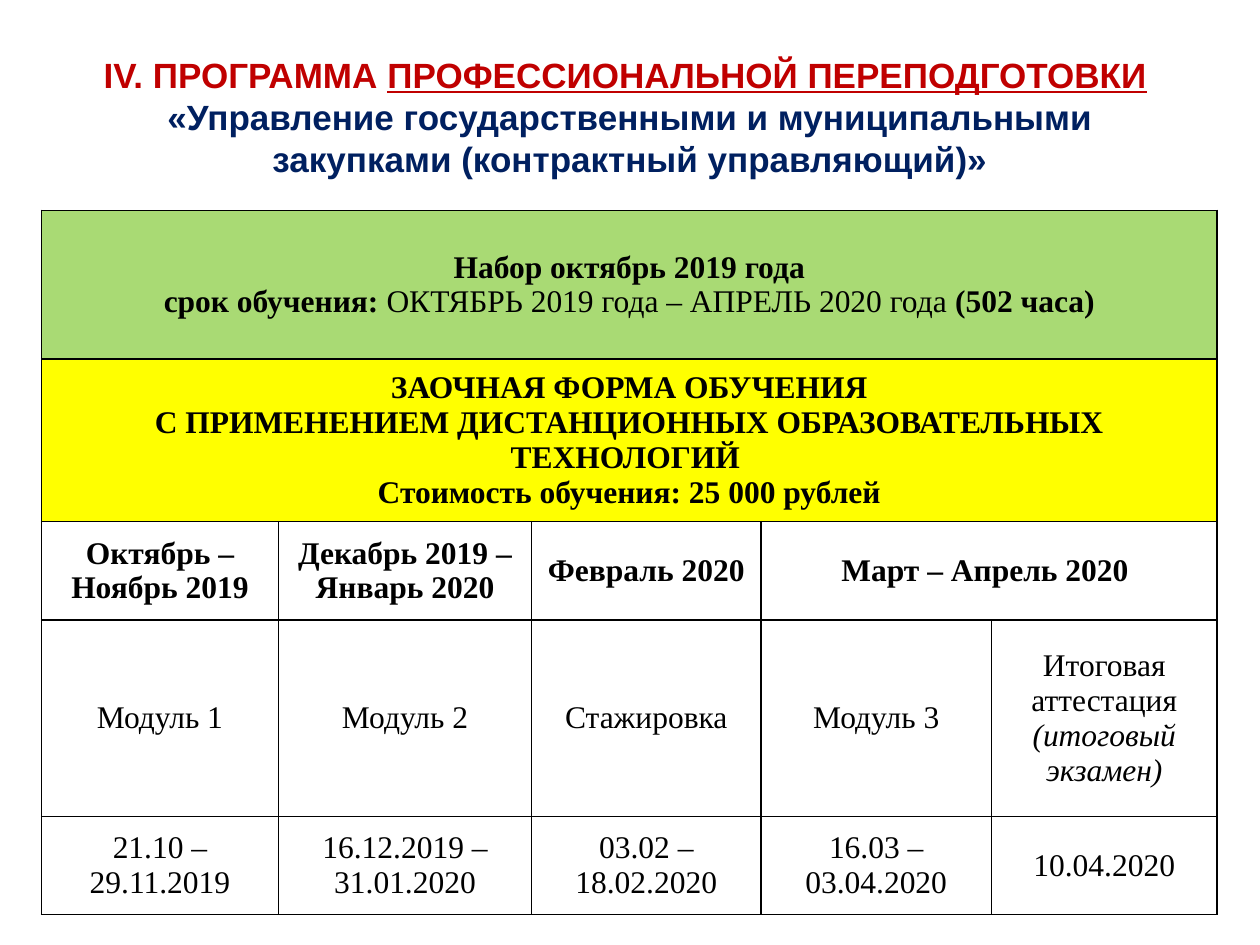
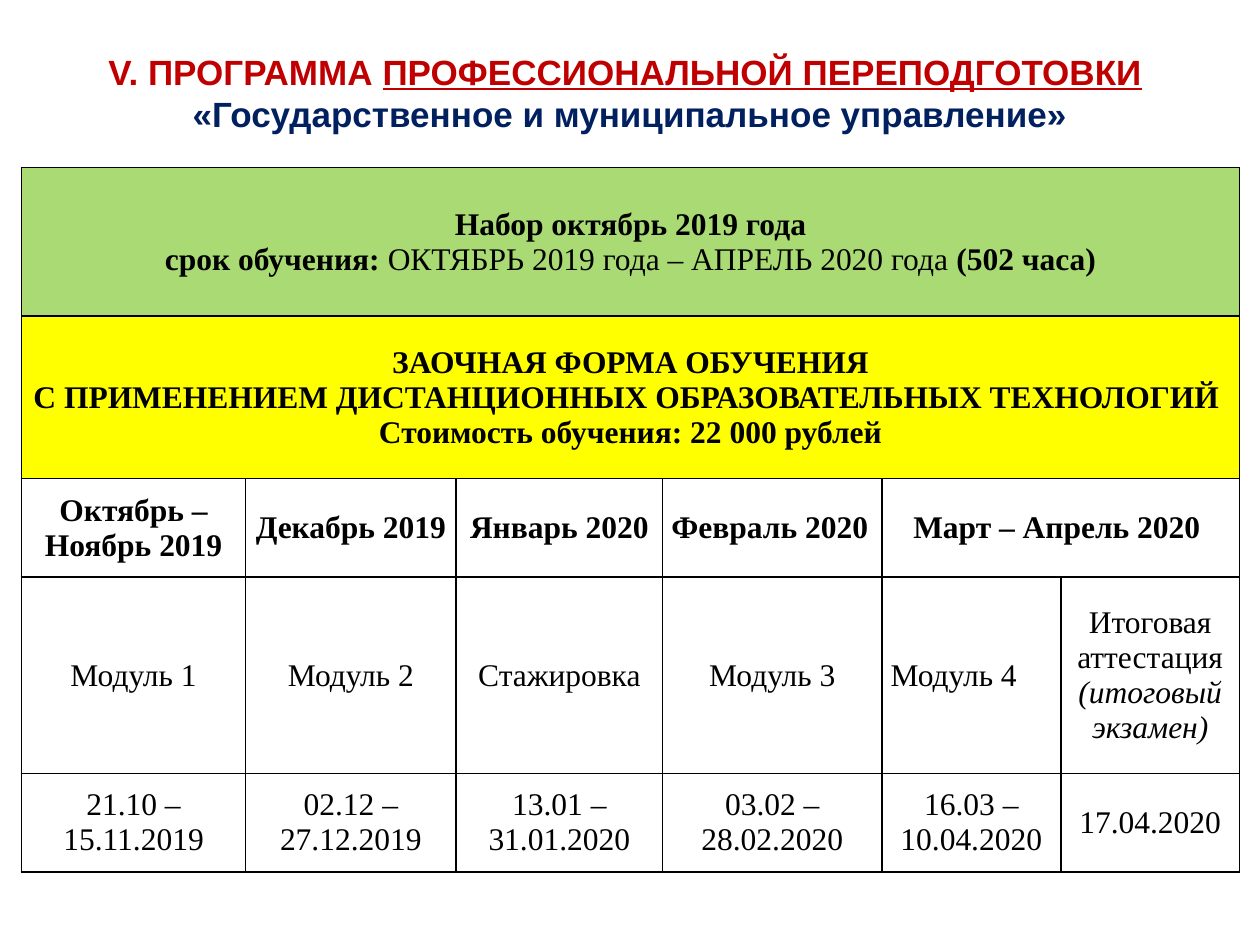
from lxml import etree
from pptx import Presentation
from pptx import util as u
from pptx.dml.color import RGBColor
from pptx.enum import text
from pptx.oxml import ns

COLORS = {"heading": "C00000", "program": "002060", "ink": "000000",
          "intake": "A9DA74", "format": "FFFF00"}
ROW_HEIGHTS = [1.18, 1.29, 0.78, 1.56, 0.78]
INTAKE = [[("Набор октябрь 2019 года", "b")],
          [("срок обучения: ", "b"), ("ОКТЯБРЬ 2019 года – АПРЕЛЬ 2020 года", ""),
           (" (502 часа)", "b")]]
EXAM = [[("Итоговая аттестация", "")], [("(итоговый экзамен)", "i")]]

PROGRAMS = [
    {"number": "IV", "name": "«Управление государственными и муниципальными "
                             "закупками (контрактный управляющий)»",
     "title_height": 1.25, "left": 0.33, "top": 1.67, "price": "25 000",
     "widths": [1.88, 2.01, 1.82, 1.83, 1.79],
     "months": ["Октябрь – Ноябрь 2019", "Декабрь 2019 – Январь 2020",
                "Февраль 2020", "Март – Апрель 2020 "],
     "stages": ["Модуль 1", "Модуль 2", "Стажировка", "Модуль 3"],
     "dates": ["21.10 – 29.11.2019", "16.12.2019 – 31.01.2020",
               "03.02 – 18.02.2020", "16.03 – 03.04.2020", "10.04.2020"],
     "left_aligned": []},
    {"number": "V", "name": "«Государственное и муниципальное управление»",
     "title_height": 0.87, "left": 0.17, "top": 1.33, "price": "22 000",
     "widths": [1.78, 1.67, 1.64, 1.74, 1.42, 1.42],
     "months": ["Октябрь – Ноябрь 2019", "Декабрь 2019", "Январь 2020",
                "Февраль 2020", "Март – Апрель 2020 "],
     "stages": ["Модуль 1", "Модуль 2", "Стажировка", "Модуль 3", "Модуль 4"],
     "dates": ["21.10 – 15.11.2019", "02.12 – 27.12.2019", "13.01 – 31.01.2020",
               "03.02 – 28.02.2020", "16.03 – 10.04.2020", "17.04.2020"],
     "left_aligned": [(2, 3), (3, 4)]},
]


class Deck:
    """Holds the style and the current slide."""

    def __init__(self):
        self.prs = Presentation()
        self.prs.slide_width, self.prs.slide_height = u.Inches(10), u.Inches(7.5)
        self.slide = None

    def new_slide(self):
        self.slide = self.prs.slides.add_slide(self.prs.slide_layouts[6])

    def run(self, paragraph, words, flags, font, size, color):
        run = paragraph.add_run()
        run.text = words
        run.font.name, run.font.size = font, u.Pt(size)
        run.font.bold, run.font.italic = "b" in flags, "i" in flags
        run.font.underline = "u" in flags
        run.font.color.rgb = RGBColor.from_string(COLORS[color])

    def title(self, number, name, height):
        box = self.slide.shapes.add_textbox(
            u.Inches(0.5), u.Inches(0.3), u.Inches(9), u.Inches(height))
        frame = box.text_frame
        frame.word_wrap = True
        frame.vertical_anchor = text.MSO_ANCHOR.MIDDLE
        heading = frame.paragraphs[0]
        heading.alignment = text.PP_ALIGN.CENTER
        heading.line_spacing = u.Pt(24)
        for words, flags in [(f"{number}. ПРОГРАММА ", "b"),
                             ("ПРОФЕССИОНАЛЬНОЙ ПЕРЕПОДГОТОВКИ", "bu"), (" ", "b")]:
            self.run(heading, words, flags, "Arial", 20, "heading")
        heading.add_line_break()
        self.run(heading, name, "b", "Arial", 20, "program")

    def border(self, cell):
        props = cell._tc.get_or_add_tcPr()
        for index, side in enumerate(["lnL", "lnR", "lnT", "lnB"]):
            line = etree.Element(ns.qn(f"a:{side}"), w=str(u.Pt(1)))
            fill = etree.SubElement(line, ns.qn("a:solidFill"))
            etree.SubElement(fill, ns.qn("a:srgbClr"), val=COLORS["ink"])
            props.insert(index, line)

    def cell(self, cell, lines, align=text.PP_ALIGN.CENTER):
        cell.vertical_anchor = text.MSO_ANCHOR.MIDDLE
        cell.margin_left = cell.margin_right = u.Inches(0.07)
        cell.margin_top = cell.margin_bottom = 0
        frame = cell.text_frame
        for index, line in enumerate(lines):
            paragraph = frame.add_paragraph() if index else frame.paragraphs[0]
            paragraph.alignment = align
            for words, flags in line:
                self.run(paragraph, words, flags, "Times New Roman", 18, "ink")

    def schedule(self, program):
        widths = program["widths"]
        last = len(widths) - 1
        table = self.slide.shapes.add_table(
            len(ROW_HEIGHTS), len(widths), u.Inches(program["left"]),
            u.Inches(program["top"]), u.Inches(sum(widths)),
            u.Inches(sum(ROW_HEIGHTS))).table
        table.first_row = table.horz_banding = False
        for column, width in zip(table.columns, widths):
            column.width = u.Inches(width)
        for row, height in zip(table.rows, ROW_HEIGHTS):
            row.height = u.Inches(height)

        # Fills and borders
        for row, fill in enumerate(["intake", "format", None, None, None]):
            for cell in table.rows[row].cells:
                if fill:
                    cell.fill.solid()
                    cell.fill.fore_color.rgb = RGBColor.from_string(COLORS[fill])
                else:
                    cell.fill.background()
                self.border(cell)

        # Joined cells: two full-width bands and the closing months
        for row, first in [(0, 0), (1, 0), (2, last - 1)]:
            table.cell(row, first).merge(table.cell(row, last))

        # Wording
        study_format = [[(words, "b")] for words in (
            "ЗАОЧНАЯ ФОРМА ОБУЧЕНИЯ",
            "С ПРИМЕНЕНИЕМ ДИСТАНЦИОННЫХ ОБРАЗОВАТЕЛЬНЫХ ТЕХНОЛОГИЙ ",
            f"Стоимость обучения: {program['price']} рублей")]
        rows = [[INTAKE], [study_format],
                [[[(month, "b")]] for month in program["months"]],
                [[[(stage, "")]] for stage in program["stages"]] + [EXAM],
                [[[(date, "")]] for date in program["dates"]]]
        for row, entries in enumerate(rows):
            for col, lines in enumerate(entries):
                is_left = (row, col) in program["left_aligned"]
                align = text.PP_ALIGN.LEFT if is_left else text.PP_ALIGN.CENTER
                self.cell(table.cell(row, col), lines, align)


def main():
    deck = Deck()
    for program in PROGRAMS:
        deck.new_slide()
        deck.title(program["number"], program["name"], program["title_height"])
        deck.schedule(program)
    deck.prs.save("out.pptx")


if __name__ == "__main__":
    main()
